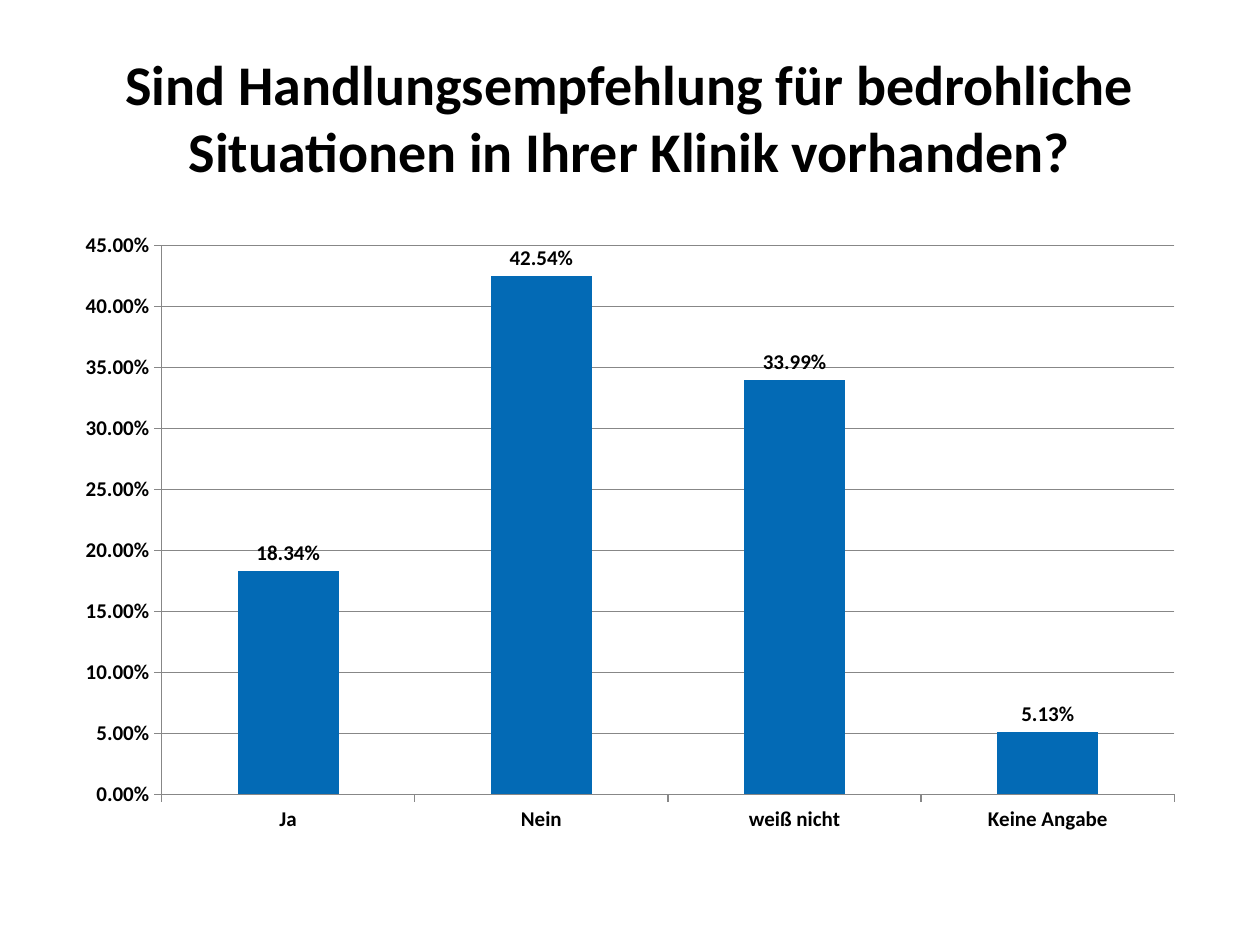
from pptx import Presentation
from pptx.chart.data import CategoryChartData
from pptx.dml.color import RGBColor
from pptx.enum import chart as ch, text as tx
from pptx.util import Cm, Pt

BLACK = RGBColor(0x00, 0x00, 0x00)
BLUE = RGBColor(0x03, 0x6A, 0xB5)
GREY = RGBColor(0x87, 0x87, 0x87)
PERCENT = "0.00%"


def style_font(font, size):
    font.name = "Calibri"
    font.size = Pt(size)
    font.bold = True
    font.color.rgb = BLACK


def add_text(slide, words, left, top, width, height, size, align):
    box = slide.shapes.add_textbox(left, top, width, height)
    frame = box.text_frame
    frame.word_wrap = True
    frame.vertical_anchor = tx.MSO_ANCHOR.MIDDLE
    paragraph = frame.paragraphs[0]
    paragraph.alignment = align
    run = paragraph.add_run()
    run.text = words
    style_font(run.font, size)


prs = Presentation()
prs.slide_width = Cm(25.4)
prs.slide_height = Cm(19.05)
slide = prs.slides.add_slide(prs.slide_layouts[6])

add_text(
    slide,
    "Sind Handlungsempfehlung für bedrohliche Situationen in Ihrer Klinik vorhanden?",
    left=Cm(1.27), top=Cm(0.76), width=Cm(22.86), height=Cm(3.18),
    size=32, align=tx.PP_ALIGN.CENTER,
)

answers = CategoryChartData(number_format=PERCENT)
answers.categories = ["Ja", "Nein", "weiß nicht", "Keine Angabe"]
answers.add_series("Series 1", [0.1834, 0.4254, 0.3399, 0.0513])
survey = slide.shapes.add_chart(
    ch.XL_CHART_TYPE.COLUMN_CLUSTERED,
    Cm(1.27), Cm(4.45), Cm(22.86), Cm(12.57), answers,
).chart
survey.has_legend = False
survey.has_title = False
style_font(survey.font, 12)

shares = survey.value_axis
shares.minimum_scale = 0
shares.maximum_scale = 0.45
shares.major_unit = 0.05
shares.has_major_gridlines = True
shares.major_gridlines.format.line.color.rgb = GREY
shares.major_gridlines.format.line.width = Pt(0.75)
shares.tick_labels.number_format = PERCENT
shares.tick_labels.number_format_is_linked = False

for axis in (survey.category_axis, shares):
    axis.major_tick_mark = ch.XL_TICK_MARK.OUTSIDE
    axis.minor_tick_mark = ch.XL_TICK_MARK.NONE
    axis.format.line.color.rgb = GREY
    axis.format.line.width = Pt(0.75)

bars = survey.plots[0]
bars.gap_width = 150
bars.vary_by_categories = False
fill = bars.series[0].format.fill
fill.solid()
fill.fore_color.rgb = BLUE

bars.has_data_labels = True
labels = bars.data_labels
labels.show_value = True
labels.number_format = PERCENT
labels.number_format_is_linked = False
labels.position = ch.XL_LABEL_POSITION.OUTSIDE_END
style_font(labels.font, 12)

prs.save("out.pptx")
